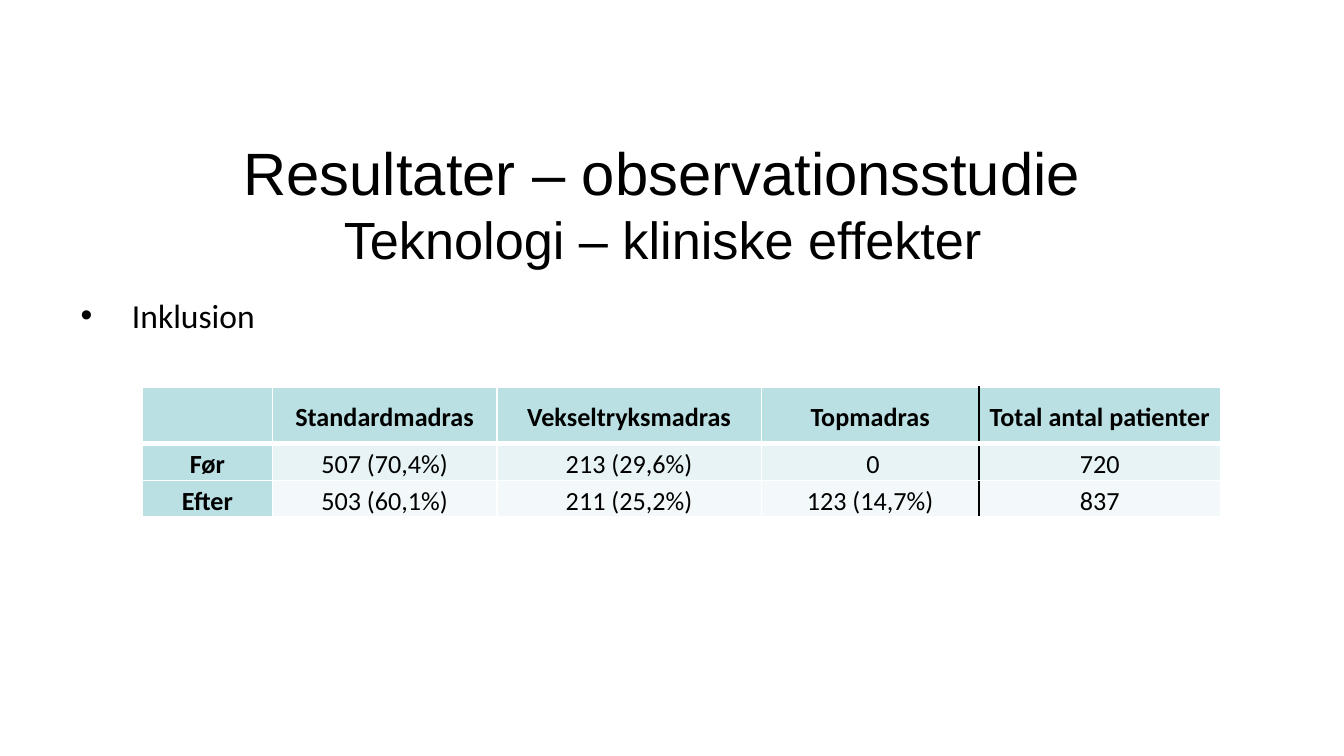
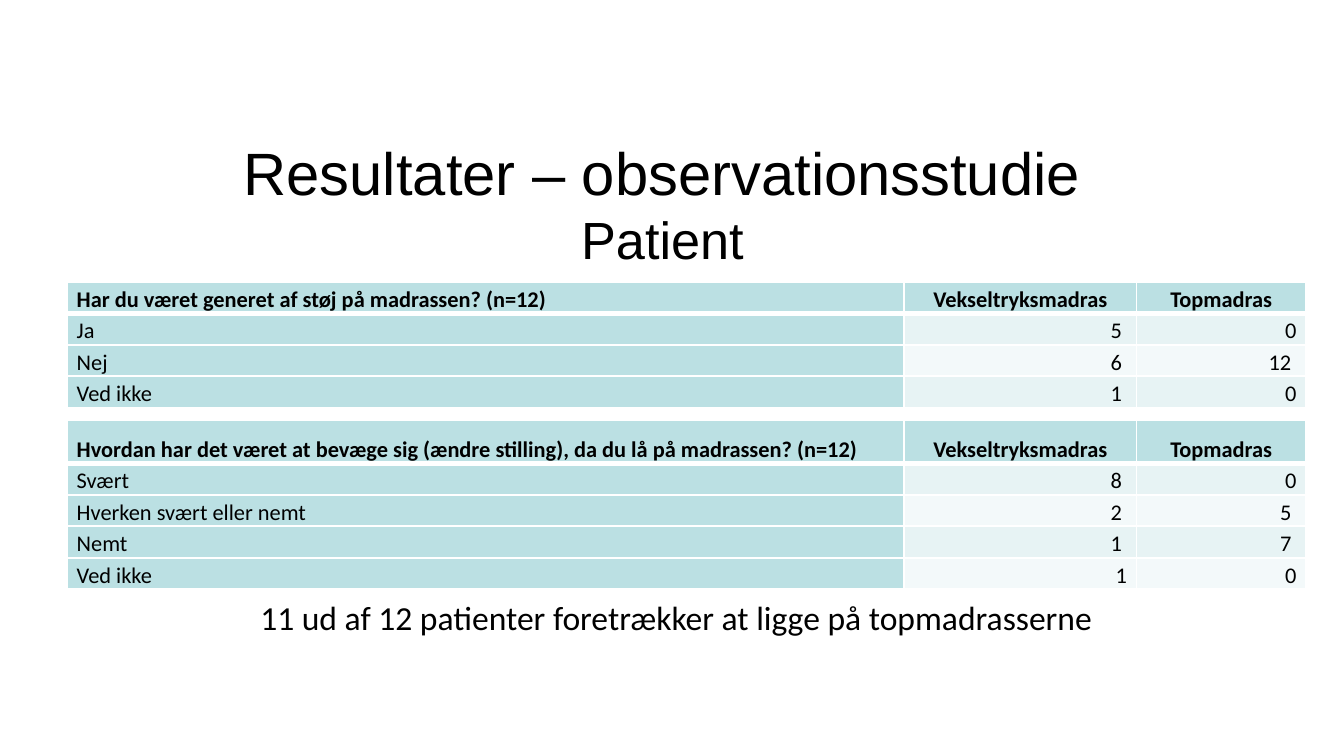
"""Builds two result slides from an observational study of mattresses."""
from dataclasses import dataclass

from lxml import etree
from pptx import Presentation
from pptx.dml.color import RGBColor
from pptx.enum.text import MSO_ANCHOR, MSO_AUTO_SIZE, PP_ALIGN
from pptx.oxml.ns import qn
from pptx.util import Cm, Pt

TOP, MIDDLE, BOTTOM = MSO_ANCHOR.TOP, MSO_ANCHOR.MIDDLE, MSO_ANCHOR.BOTTOM
LEFT, CENTER, RIGHT = PP_ALIGN.LEFT, PP_ALIGN.CENTER, PP_ALIGN.RIGHT
JUSTIFY = PP_ALIGN.JUSTIFY
NO_AUTOFIT = MSO_AUTO_SIZE.NONE

BLACK, WHITE = "000000", "FFFFFF"
HEADING_FILL = "BBE0E3"
BAND_FILLS = ("E7F3F4", "F3F9FA")
TITLE_FONT, BODY_FONT = "Arial", "Calibri"
TITLE_LAYOUT, LIST_LAYOUT = 5, 1


@dataclass(frozen=True)
class TableStyle:
    """Describes how the cells of a table are set."""
    size: float
    row_height: float
    heading_anchor: MSO_ANCHOR
    label_align: PP_ALIGN
    value_align: PP_ALIGN
    bold_labels: bool


@dataclass(frozen=True)
class ResultTable:
    """Holds one table with its place in centimetres."""
    left: float
    top: float
    widths: tuple[float, ...]
    header_height: float
    corner_align: PP_ALIGN
    rows: tuple[tuple[str, ...], ...]
    style: TableStyle
    divider: int = 0


COUNT_STYLE = TableStyle(14, 0.69, MIDDLE, CENTER, CENTER, True)
ANSWER_STYLE = TableStyle(12, 0.59, BOTTOM, JUSTIFY, RIGHT, False)
ANSWER_LEFT = 1.27
ANSWER_WIDTHS = (15.82, 4.39, 3.2)
MATTRESSES = ("Vekseltryksmadras", "Topmadras")

INCLUSION = ResultTable(
    2.69, 7.32, (2.46, 4.24, 5, 4.11, 4.57), 1.07, CENTER,
    (("", "Standardmadras", *MATTRESSES, "Total antal patienter"),
     ("Før", "507 (70,4%)", "213 (29,6%)", " 0", "720"),
     ("Efter", "503 (60,1%)", "211 (25,2%)", "123 (14,7%)", "837")),
    COUNT_STYLE, divider=4)

MOVEMENT = ResultTable(
    ANSWER_LEFT, 7.95, ANSWER_WIDTHS, 0.81, LEFT,
    (("Hvordan har det været at bevæge sig (ændre stilling), "
      "da du lå på madrassen? (n=12)", *MATTRESSES),
     ("Svært", "8 ", "0"),
     ("Hverken svært eller nemt", "2 ", "5 "),
     ("Nemt", "1 ", "7 "),
     ("Ved ikke", "1", "0")),
    ANSWER_STYLE)

NOISE = ResultTable(
    ANSWER_LEFT, 5.33, ANSWER_WIDTHS, 0.59, JUSTIFY,
    (("Har du været generet af støj på madrassen? (n=12)", *MATTRESSES),
     ("Ja", "5 ", "0"),
     ("Nej", "6 ", "12 "),
     ("Ved ikke", "1 ", "0")),
    ANSWER_STYLE)


def color(value: str) -> RGBColor:
    """Turns a hex string into a colour."""
    return RGBColor.from_string(value)


def add_run(paragraph, text: str, size: float, font: str, bold: bool = False) -> None:
    """Adds one formatted black run to a paragraph."""
    run = paragraph.add_run()
    run.text = text
    run.font.size = Pt(size)
    run.font.name = font
    run.font.bold = bold
    run.font.color.rgb = color(BLACK)


def place(shape, left: float, top: float, width: float, height: float) -> None:
    """Moves a shape to a place given in centimetres."""
    shape.left, shape.top = Cm(left), Cm(top)
    shape.width, shape.height = Cm(width), Cm(height)


def add_titled_slide(prs, layout: int, topic: str):
    """Adds a slide with the shared heading and its topic line."""
    slide = prs.slides.add_slide(prs.slide_layouts[layout])
    title = slide.shapes.title
    place(title, 1.09, 2.34, 22.86, 2.11)
    frame = title.text_frame
    frame.auto_size = NO_AUTOFIT
    frame.vertical_anchor = TOP
    frame.margin_top = Cm(0.23)
    heading, subheading = frame.paragraphs[0], frame.add_paragraph()
    for paragraph, text, size in ((heading, "Resultater – observationsstudie", 32),
                                  (subheading, topic, 28)):
        paragraph.alignment = CENTER
        add_run(paragraph, text, size, TITLE_FONT)
    return slide


def add_bullet(body, text: str) -> None:
    """Fills the body placeholder with one bulleted line."""
    place(body, 1.27, 5.44, 23.24, 7.49)
    body.text_frame.auto_size = NO_AUTOFIT
    paragraph = body.text_frame.paragraphs[0]
    properties = paragraph._p.get_or_add_pPr()
    indent = Cm(0.97)
    properties.set("marL", str(indent))
    properties.set("indent", str(-indent))
    etree.SubElement(properties, qn("a:buChar")).set("char", "•")
    paragraph.space_before = Pt(0)
    add_run(paragraph, text, 18, BODY_FONT)


def add_border(cell, side: str, line_color: str = WHITE, width: float = 1) -> None:
    """Draws one side of a cell border."""
    line = etree.SubElement(cell._tc.get_or_add_tcPr(), qn(f"a:ln{side}"))
    line.set("w", str(Pt(width)))
    fill = etree.SubElement(line, qn("a:solidFill"))
    etree.SubElement(fill, qn("a:srgbClr")).set("val", line_color)


def format_cell(cell, data: ResultTable, row: int, column: int) -> None:
    """Sets the borders, fill and text of one cell."""
    style = data.style
    is_header, is_label = row == 0, column == 0
    is_heading = is_header or is_label
    divider = data.divider
    add_border(cell, "L", BLACK if divider and column == divider else WHITE)
    add_border(cell, "R", BLACK if divider and column == divider - 1 else WHITE)
    add_border(cell, "T", width=3 if row == 1 else 1)
    add_border(cell, "B", width=3 if is_header else 1)
    cell.fill.solid()
    cell.fill.fore_color.rgb = color(
        HEADING_FILL if is_heading else BAND_FILLS[(row - 1) % 2])
    cell.margin_left = cell.margin_right = Cm(0.18)
    cell.margin_top = cell.margin_bottom = 0
    cell.vertical_anchor = style.heading_anchor if is_heading else MIDDLE

    paragraph = cell.text_frame.paragraphs[0]
    paragraph.line_spacing = 1.15
    if is_header:
        paragraph.alignment = data.corner_align if is_label else CENTER
    else:
        paragraph.alignment = style.label_align if is_label else style.value_align
    if data.rows[row][column]:
        bold = is_header or (is_label and style.bold_labels)
        add_run(paragraph, data.rows[row][column], style.size, BODY_FONT, bold)


def add_result_table(slide, data: ResultTable) -> None:
    """Adds a table of results."""
    heights = [data.header_height] + [data.style.row_height] * (len(data.rows) - 1)
    table = slide.shapes.add_table(
        len(heights), len(data.widths), Cm(data.left), Cm(data.top),
        Cm(sum(data.widths)), Cm(sum(heights))).table
    for column, width in zip(table.columns, data.widths):
        column.width = Cm(width)
    for row, height in zip(table.rows, heights):
        row.height = Cm(height)
    for row in range(len(heights)):
        for column in range(len(data.widths)):
            format_cell(table.cell(row, column), data, row, column)


def add_conclusion(slide, text: str) -> None:
    """Adds a centred closing line below the tables."""
    conclusion = slide.shapes.add_textbox(Cm(2.18), Cm(11.15), Cm(21.21), Cm(1.02))
    conclusion.text_frame.word_wrap = True
    paragraph = conclusion.text_frame.paragraphs[0]
    paragraph.alignment = CENTER
    add_run(paragraph, text, 18, BODY_FONT)


def main() -> None:
    """Builds and saves the presentation."""
    prs = Presentation()
    prs.slide_width, prs.slide_height = Cm(25.4), Cm(14.29)

    effects = add_titled_slide(prs, LIST_LAYOUT, "Teknologi – kliniske effekter")
    add_bullet(effects.placeholders[1], "Inklusion")
    add_result_table(effects, INCLUSION)

    patient = add_titled_slide(prs, TITLE_LAYOUT, "Patient")
    for answers in (MOVEMENT, NOISE):
        add_result_table(patient, answers)
    add_conclusion(patient, "11 ud af 12 patienter foretrækker at ligge på topmadrasserne")

    prs.save("out.pptx")


if __name__ == "__main__":
    main()
